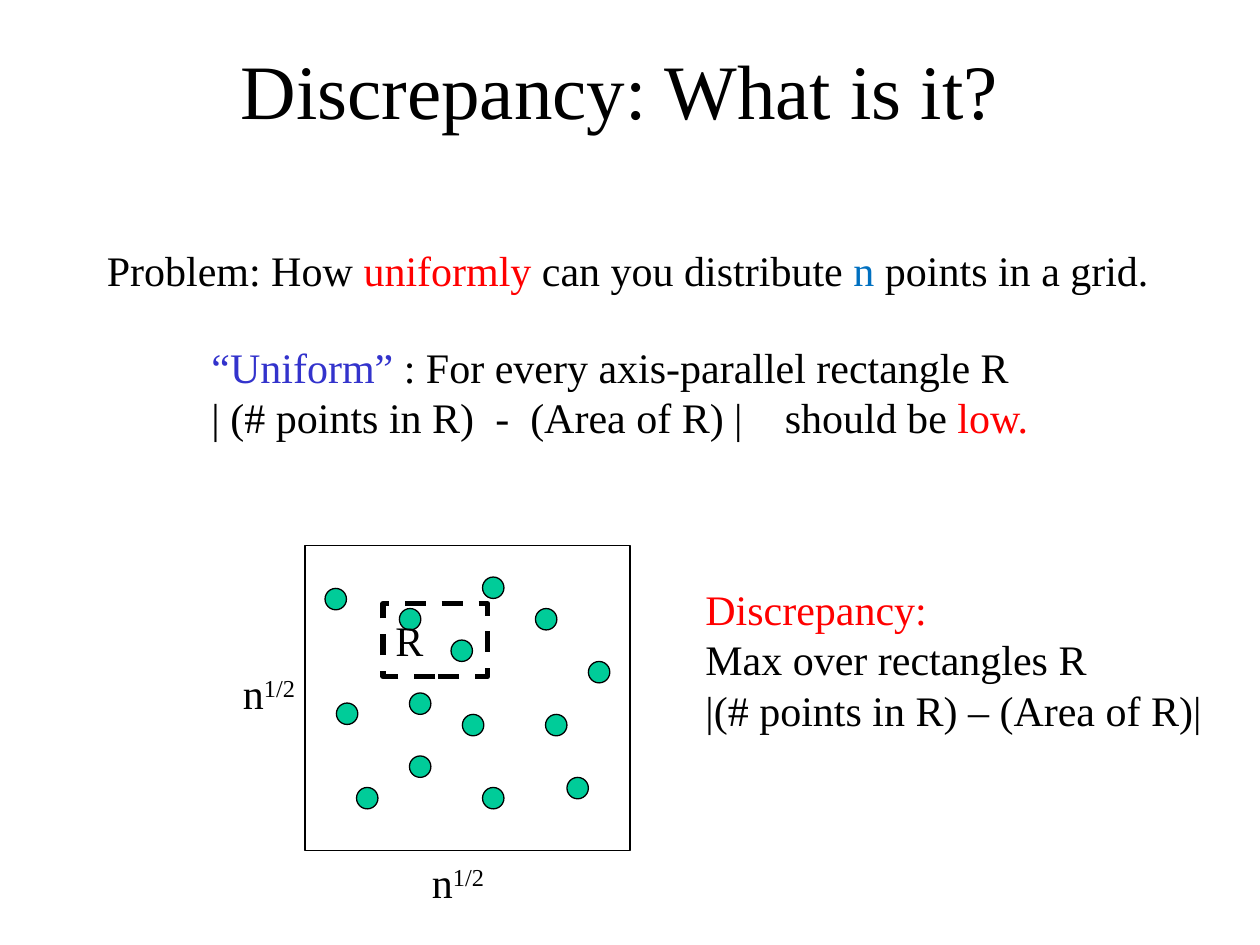
from pptx import Presentation
from pptx.dml.color import RGBColor
from pptx.enum.dml import MSO_LINE
from pptx.enum.shapes import MSO_SHAPE
from pptx.enum.text import MSO_ANCHOR, PP_ALIGN
from pptx.util import Inches, Pt

BLACK, RED, BLUE, INDIGO, GREEN = "000000", "FF0000", "0070C0", "3333CC", "00CC99"


def write(paragraph, spans, size=24):
    """Add (text, colour, extra rPr attributes) spans to a paragraph."""
    for text, colour, extra in spans:
        span = paragraph.add_run()
        span.text = text
        span.font.name = "Times New Roman"
        span.font.size = Pt(size)
        span.font.color.rgb = RGBColor.from_string(colour)
        for name, value in extra.items():
            span.font._element.set(name, value)


def add_outline(kind, left, top, width, height, weight=0.75, fill=None):
    shape = page.shapes.add_shape(
        kind, Inches(left), Inches(top), Inches(width), Inches(height))
    shape.shadow.inherit = False
    if fill:
        shape.fill.solid()
        shape.fill.fore_color.rgb = RGBColor.from_string(fill)
    else:
        shape.fill.background()
    shape.line.color.rgb = RGBColor.from_string(BLACK)
    shape.line.width = Pt(weight)
    return shape


deck = Presentation()
deck.slide_width, deck.slide_height = Inches(10), Inches(7.5)
page = deck.slides.add_slide(deck.slide_layouts[6])

# Title
title = page.shapes.add_textbox(Inches(0.67), Inches(0.08), Inches(8.5), Inches(1.25))
title.text_frame.word_wrap = True
title.text_frame.vertical_anchor = MSO_ANCHOR.MIDDLE
heading = title.text_frame.paragraphs[0]
heading.alignment = PP_ALIGN.CENTER
write(heading, [("Discrepancy: What is it?", BLACK, {})], size=44)

# Problem statement: space before (pt), left margin (in), spans
wide_gap = (" ", BLACK, {"spc": "600"})
statement = [
    (0, 0, [("Problem: How ", BLACK, {}), ("uniformly", RED, {}),
            (" can you distribute ", BLACK, {}), ("n", BLUE, {}),
            (" points in a grid.", BLACK, {})]),
    (32.5, 0.83, [("“Uniform”", INDIGO, {}),
                  (" : For every axis-parallel rectangle R", BLACK, {})]),
    (5, 0.83, [("| (# points in R)", BLACK, {}), wide_gap, ("-", BLACK, {}), wide_gap,
               ("(Area of R) |", BLACK, {}), (" ", BLACK, {"spc": "1800"}),
               ("should be ", BLACK, {}), ("low.", RED, {})]),
]
body = page.shapes.add_textbox(Inches(0.75), Inches(1.5), Inches(8.75), Inches(2.5))
body.text_frame.word_wrap = True
body.text_frame.margin_top = Inches(0.52)
for index, (before, margin, spans) in enumerate(statement):
    paragraph = body.text_frame.add_paragraph() if index else body.text_frame.paragraphs[0]
    paragraph.space_before = Pt(before)
    paragraph.line_spacing = 0.8
    paragraph._p.get_or_add_pPr().set("marL", str(Inches(margin)))
    write(paragraph, spans)

# Grid with its side lengths
add_outline(MSO_SHAPE.RECTANGLE, 2.42, 4.33, 2.58, 2.42)
for left, top in [(1.83, 5.25), (3.33, 6.75)]:
    side = page.shapes.add_textbox(Inches(left), Inches(top), Inches(0.65), Inches(0.5))
    side.text_frame.word_wrap = False
    write(side.text_frame.paragraphs[0],
          [("n", BLACK, {}), ("1/2", BLACK, {"baseline": "30000"})])

# Points
points = [
    (2.67, 5.58), (3.17, 4.83), (3.83, 6.25), (3.67, 5.67), (4.25, 4.83),
    (4.5, 6.17), (2.83, 6.25), (3.58, 5.08), (3.25, 5.5), (4.33, 5.67),
    (2.58, 4.67), (3.83, 4.58), (4.67, 5.25), (3.25, 6),
]
for left, top in points:
    add_outline(MSO_SHAPE.OVAL, left, top, 0.17, 0.17, fill=GREEN)

# Rectangle R
region = add_outline(MSO_SHAPE.RECTANGLE, 3.04, 4.79, 0.83, 0.58, weight=3)
region.line.dash_style = MSO_LINE.DASH
region.text_frame.vertical_anchor = MSO_ANCHOR.MIDDLE
region_label = region.text_frame.paragraphs[0]
region_label.alignment = PP_ALIGN.LEFT
write(region_label, [("R", BLACK, {})])

# Definition
definition = page.shapes.add_textbox(Inches(5.5), Inches(4.58), Inches(4.22), Inches(1.3))
definition.text_frame.word_wrap = False
lines = [("Discrepancy:", RED), ("Max over rectangles R", BLACK),
         ("|(# points in R) – (Area of R)|", BLACK)]
for index, (text, colour) in enumerate(lines):
    frame = definition.text_frame
    paragraph = frame.add_paragraph() if index else frame.paragraphs[0]
    write(paragraph, [(text, colour, {})])

deck.save("out.pptx")
